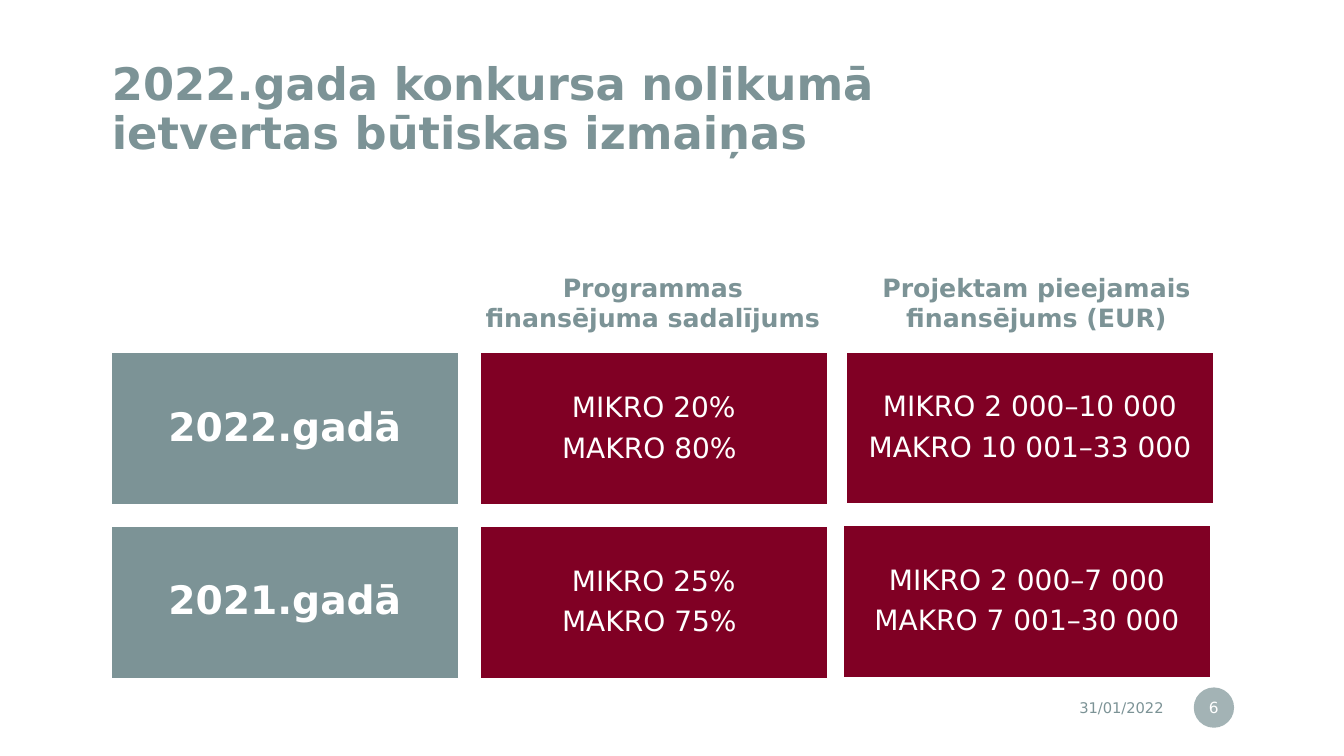
import pptx
import pptx.util
import pptx.dml.color
import pptx.enum.shapes
import pptx.enum.text
import pptx.oxml
import pptx.oxml.ns

FONT = "DejaVu Sans"
COLOURS = {"sage": "7C9396", "wine": "800024", "white": "FFFFFF"}
ALIGN = pptx.enum.text.PP_ALIGN
ANCHOR = pptx.enum.text.MSO_ANCHOR
SHAPE = pptx.enum.shapes.MSO_SHAPE

COLUMNS = [(1.1, 3.45), (4.76, 3.45), (8.39, 3.65)]
ROW_TOP, ROW_PITCH, ROW_HEIGHT = 3.5, 1.72, 1.51
LAST_COLUMN_SHIFT = -0.03
HEADINGS = [
    ("Programmas finansējuma sadalījums", (4.58, 2.65, 3.79, 0.71)),
    ("Projektam pieejamais finansējums (EUR)", (8.56, 2.65, 3.44, 0.71)),
]
YEARS = [
    (["2022.gadā"], ["MIKRO 20%", "MAKRO 80% "],
     ["MIKRO 2 000–10 000", "MAKRO 10 001–33 000"]),
    (["2021.gadā"], ["MIKRO 25%", "MAKRO 75% "],
     ["MIKRO 2 000–7 000", "MAKRO 7 001–30 000"]),
]


def inches(box):
    """Convert a box in inches to slide lengths."""
    return [pptx.util.Inches(length) for length in box]


def rgb(name):
    """Return the named palette colour."""
    return pptx.dml.color.RGBColor.from_string(COLOURS[name])


def write(shape, lines, size, colour, bold=False, anchor=ANCHOR.MIDDLE,
          insets=(0.1, 0.05), **layout):
    """Write formatted paragraphs into a shape."""
    across, down = inches(insets)
    frame = shape.text_frame
    frame.text = "\n".join(lines)
    frame_format = {
        "word_wrap": True, "auto_size": pptx.enum.text.MSO_AUTO_SIZE.NONE,
        "vertical_anchor": anchor, "margin_left": across, "margin_right": across,
        "margin_top": down, "margin_bottom": down,
    }
    for key, value in frame_format.items():
        setattr(frame, key, value)
    font_format = {"name": FONT, "size": pptx.util.Pt(size), "bold": bold}
    for paragraph in frame.paragraphs:
        for key, value in ({"alignment": ALIGN.CENTER} | layout).items():
            setattr(paragraph, key, value)
        for run in paragraph.runs:
            for key, value in font_format.items():
                setattr(run.font, key, value)
            run.font.color.rgb = rgb(colour)


def add_panel(slide, kind, box, colour):
    """Add a filled shape without shadow."""
    panel = slide.shapes.add_shape(kind, *inches(box))
    panel.shadow.inherit = False
    panel.fill.solid()
    panel.fill.fore_color.rgb = rgb(colour)
    return panel


def add_title(slide, box):
    """Place the slide heading in the title placeholder."""
    title = slide.shapes.title
    title.left, title.top, title.width, title.height = inches(box)
    write(title, ["2022.gada konkursa nolikumā ietvertas būtiskas izmaiņas"], 32,
          "sage", True, insets=(0.2, 0.2), alignment=ALIGN.LEFT, line_spacing=0.9)


def add_headings(slide):
    """Place the headings above the funding columns."""
    for wording, box in HEADINGS:
        heading = slide.shapes.add_textbox(*inches(box))
        write(heading, [wording], 18, "sage", True, ANCHOR.TOP)


def add_year_row(slide, top, cells, shift):
    """Place one year label with its two funding panels."""
    for column, ((left, width), lines) in enumerate(zip(COLUMNS, cells)):
        is_label, is_last = column == 0, column == 2
        box = (left + shift * is_last, top - 0.01 * is_last, width, ROW_HEIGHT)
        panel = add_panel(slide, SHAPE.RECTANGLE, box, "sage" if is_label else "wine")
        panel.line.color.rgb = rgb("white")
        panel.line.width = pptx.util.Pt(1)
        size, inset = (28, 0.12) if is_label else (20, 0.08)
        write(panel, lines, size, "white", is_label, insets=(inset, inset),
              line_spacing=0.9, space_after=pptx.util.Pt(size * 0.35))


def add_footer(slide, box):
    """Place the date and the page badge at the ends of the box."""
    left, top, width, height = box
    badge_size = 0.4
    date = slide.shapes.add_textbox(*inches((left, top + 0.02, 3.01, height)))
    write(date, ["31/01/2022"], 10.5, "sage", alignment=ALIGN.RIGHT)
    badge = add_panel(slide, SHAPE.OVAL,
                      (left + width - badge_size, top, badge_size, badge_size), "sage")
    badge.line.fill.background()
    tint = badge._element.spPr.find(".//" + pptx.oxml.ns.qn("a:srgbClr"))
    alpha = pptx.oxml.parse_xml(
        f'<a:alpha {pptx.oxml.ns.nsdecls("a")} val="70000"/>')
    tint.append(alpha)
    write(badge, ["6"], 11, "white", insets=(0.02, 0.05))


def main():
    """Build and save the slide."""
    deck = pptx.Presentation()
    deck.slide_width, deck.slide_height = inches((13.33, 7.5))
    slide = deck.slides.add_slide(deck.slide_layouts[5])
    add_title(slide, (0.91, 0.48, 8.73, 1.23))
    add_footer(slide, (8.63, 6.82, 3.61, 0.35))
    for row, cells in enumerate(YEARS):
        add_year_row(slide, ROW_TOP + row * ROW_PITCH, cells, row * LAST_COLUMN_SHIFT)
    add_headings(slide)
    deck.save("out.pptx")


if __name__ == "__main__":
    main()
